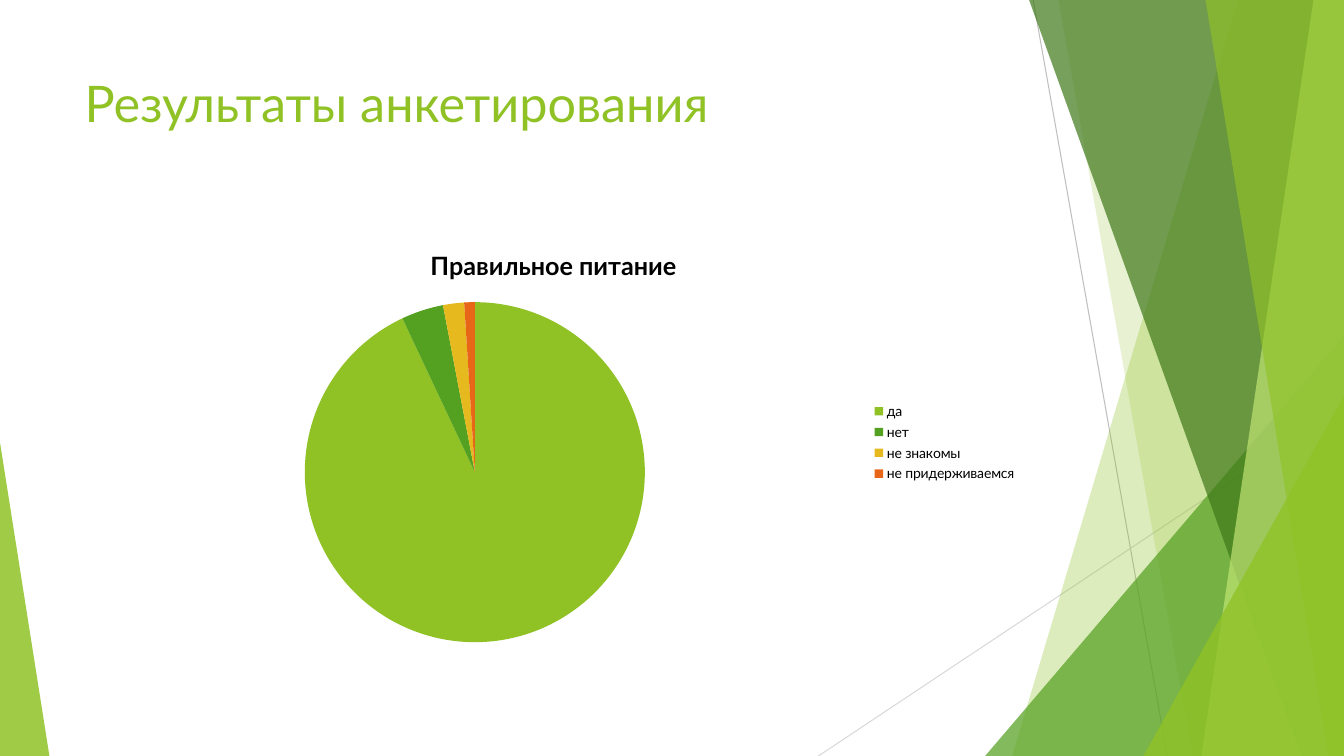
"""Build the survey results slide with its pie chart."""
from dataclasses import dataclass

from lxml import etree
from pptx import Presentation
from pptx import util as u
from pptx.chart.data import CategoryChartData
from pptx.dml.color import RGBColor
from pptx.enum import chart as charts, shapes, text
from pptx.oxml.ns import qn


@dataclass(frozen=True)
class Theme:
    """Colours, font and type sizes of the deck."""
    lime: str = "90C226"
    green: str = "54A021"
    dark: str = "3F7819"
    pale: str = "C0E474"
    yellow: str = "E6B91E"
    orange: str = "E76618"
    black: str = "000000"
    line: str = "BFBFBF"
    faint_line: str = "D9D9D9"
    font: str = "Lato"
    title_size: int = 36
    chart_title_size: int = 18
    legend_size: int = 10


@dataclass(frozen=True)
class Box:
    """A region of the slide in points."""
    left: float
    top: float
    width: float
    height: float

    @property
    def right(self):
        """Return the right edge."""
        return self.left + self.width

    @property
    def bottom(self):
        """Return the bottom edge."""
        return self.top + self.height

    def lengths(self):
        """Return left, top, width and height as slide lengths."""
        return [u.Pt(n) for n in (self.left, self.top, self.width, self.height)]


THEME = Theme()
PAGE = Box(0, 0, 960, 540)
TITLE = Box(53.3, 48.2, 676.8, 103.7)
CHART = Box(56.9, 163.4, 676.8, 305.3)
ANSWERS = [
    ("да", 93, THEME.lime),
    ("нет", 4, THEME.green),
    ("не знакомы", 2, THEME.yellow),
    ("не придерживаемся", 1, THEME.orange),
]


def format_font(font, size, color, bold=False):
    """Apply the theme font with a size, colour and weight."""
    font.name, font.size, font.bold = THEME.font, u.Pt(size), bold
    font.color.rgb = RGBColor.from_string(color)


def write_text(frame, words, align=text.PP_ALIGN.LEFT, **style):
    """Write one formatted paragraph into a text frame."""
    para = frame.paragraphs[0]
    para.alignment = align
    span = para.add_run()
    span.text = words
    format_font(span.font, **style)


def paint(shape, color, opacity):
    """Give a shape a translucent fill without line or shadow."""
    shape.shadow.inherit = False
    shape.line.fill.background()
    shape.fill.solid()
    shape.fill.fore_color.rgb = RGBColor.from_string(color)
    tint = shape.element.spPr.find(qn("a:solidFill"))[0]
    etree.SubElement(tint, qn("a:alpha"), val=str(opacity * 1000))


def add_hairline(slide, start, end, color):
    """Draw a thin straight line between two points."""
    line = slide.shapes.add_connector(
        shapes.MSO_CONNECTOR.STRAIGHT, *(u.Pt(n) for n in (*start, *end)))
    line.line.width = u.Pt(0.75)
    line.line.color.rgb = RGBColor.from_string(color)
    etree.SubElement(line.element.spPr, qn("a:effectLst"))


def add_panel(slide, box, top_x, bottom_x, color, opacity):
    """Draw a slanted panel reaching the right edge of the box."""
    corners = [(top_x, box.top), (box.right, box.top),
               (box.right, box.bottom), (bottom_x, box.bottom)]
    start, *others = [(u.Pt(x), u.Pt(y)) for x, y in corners]
    builder = slide.shapes.build_freeform(*start)
    builder.add_line_segments(others, close=True)
    paint(builder.convert_to_shape(), color, opacity)


def add_corner(slide, box, apex, color, opacity):
    """Draw a triangle whose apex sits at a fraction of its width."""
    corner = slide.shapes.add_shape(
        shapes.MSO_SHAPE.ISOSCELES_TRIANGLE, *box.lengths())
    corner.adjustments[0] = apex
    paint(corner, color, opacity)


def add_facets(slide, box):
    """Draw the layered facets along both sides of the box."""
    def corner_box(width, height, left):
        return Box(left, box.bottom - height, width, height)

    def right_corner(width, height):
        return corner_box(width, height, box.right - width)

    add_hairline(slide, (box.left + 738, box.top),
                 (box.left + 833.8, box.bottom), THEME.line)
    add_hairline(slide, (box.right, box.top + 290.2),
                 (box.left + 584.6, box.bottom), THEME.faint_line)
    add_panel(slide, box, box.left + 884.2, box.left + 723, THEME.lime, 30)
    add_panel(slide, box, box.left + 756, box.left + 851.8, THEME.lime, 20)
    add_corner(slide, right_corner(256.3, 300.2), 1, THEME.green, 72)
    for top, bottom, color, opacity in [
            (735.1, 929.5, THEME.dark, 70),
            (938.2, 858.2, THEME.pale, 70),
            (861.1, 949, THEME.lime, 65)]:
        add_panel(slide, box, box.left + top, box.left + bottom, color, opacity)
    add_corner(slide, right_corner(143.3, 257), 1, THEME.lime, 80)
    add_corner(slide, corner_box(35.3, 223.9, box.left), 0, THEME.lime, 85)


def add_title(slide, box, words):
    """Place the title placeholder in the box, in front of the facets."""
    title = slide.shapes.title
    title.left, title.top, title.width, title.height = box.lengths()
    frame = title.text_frame
    frame.word_wrap = True
    frame.auto_size = text.MSO_AUTO_SIZE.NONE
    frame.vertical_anchor = text.MSO_ANCHOR.TOP
    write_text(frame, words, size=THEME.title_size, color=THEME.lime)
    title.element.getparent().append(title.element)


def add_pie(slide, box, heading, answers):
    """Draw the pie chart of answers with a heading and a legend."""
    data = CategoryChartData()
    data.categories = [name for name, _, _ in answers]
    data.add_series("Series 1", [value for _, value, _ in answers])
    chart = slide.shapes.add_chart(
        charts.XL_CHART_TYPE.PIE, *box.lengths(), data).chart
    format_font(chart.font, THEME.legend_size, THEME.black)
    chart.has_title = True
    write_text(chart.chart_title.text_frame, heading,
               align=text.PP_ALIGN.CENTER, size=THEME.chart_title_size,
               color=THEME.black, bold=True)
    chart.chart_title.include_in_layout = False
    chart.has_legend = True
    chart.legend.position = charts.XL_LEGEND_POSITION.RIGHT
    chart.legend.include_in_layout = False
    plot = chart.plots[0]
    plot.vary_by_categories = True
    for index, (_, _, color) in enumerate(answers):
        fill = plot.series[0].points[index].format.fill
        fill.solid()
        fill.fore_color.rgb = RGBColor.from_string(color)


def main():
    """Build and save the deck."""
    deck = Presentation()
    deck.slide_width, deck.slide_height = u.Pt(PAGE.width), u.Pt(PAGE.height)
    slide = deck.slides.add_slide(deck.slide_layouts.get_by_name("Title Only"))
    add_facets(slide, PAGE)
    add_title(slide, TITLE, "Результаты анкетирования")
    add_pie(slide, CHART, "Правильное питание", ANSWERS)
    deck.save("out.pptx")


if __name__ == "__main__":
    main()
